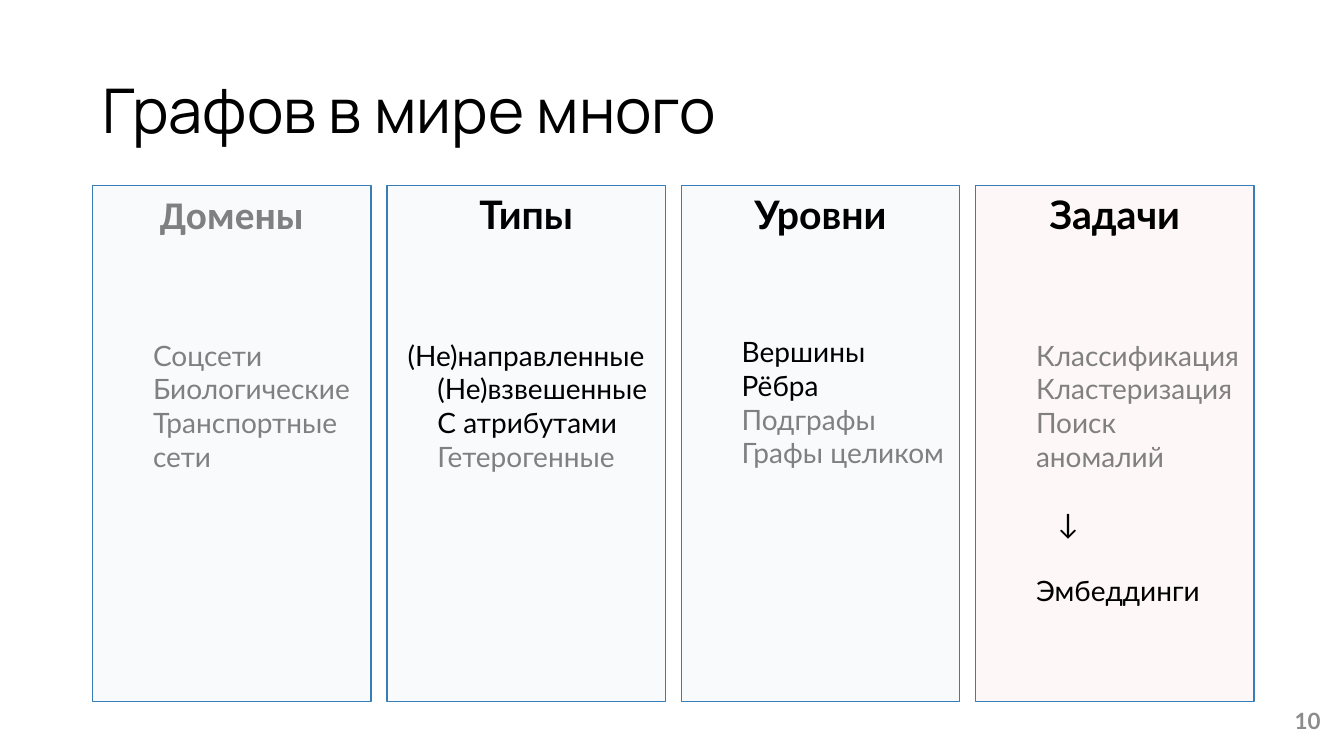
import dataclasses
import typing

import pptx
import pptx.dml.color
import pptx.enum.shapes
import pptx.enum.text
import pptx.oxml
import pptx.oxml.ns
import pptx.util

Pt = pptx.util.Pt
Align = pptx.enum.text.PP_ALIGN
Anchor = pptx.enum.text.MSO_ANCHOR

COLORS = {
    "black": "000000",
    "gray": "808080",
    "number": "8C8C8C",
    "blue": "377EB8",
    "red": "E41A1C",
}
LEFT, TOP, WIDTH, HEIGHT = 66.24, 132.48, 198.72, 368.64
PITCH = 210.24
INDENT = 36
LINE = 24


@dataclasses.dataclass(frozen=True)
class Item:
    text: str
    color: str = "black"
    indent: float = INDENT
    before: float = 0
    align: typing.Any = Align.LEFT


@dataclasses.dataclass(frozen=True)
class Column:
    heading: str
    items: tuple[Item, ...]
    color: str = "black"
    font: str = "Lato"
    tint: str = "blue"
    inset: float = 7.2
    gap: float = 3 * LINE


COLUMNS = (
    Column(
        "Домены",
        (Item("Соцсети Биологические Транспортные сети", "gray"),),
        color="gray",
        font="Calibri",
    ),
    Column(
        "Типы",
        (
            Item("(Не)направленные", indent=0, align=Align.CENTER),
            Item("(Не)взвешенные"),
            Item("С атрибутами"),
            Item("Гетерогенные", "gray"),
        ),
        inset=0,
    ),
    Column(
        "Уровни",
        (
            Item("Вершины"),
            Item("Рёбра"),
            Item("Подграфы", "gray"),
            Item("Графы целиком", "gray"),
        ),
        gap=69.6,
    ),
    Column(
        "Задачи",
        (
            Item("Классификация", "gray"),
            Item("Кластеризация", "gray"),
            Item("Поиск аномалий", "gray"),
            Item("↓", indent=INDENT + 15.4, before=LINE),
            Item("Эмбеддинги", before=LINE),
        ),
        tint="red",
    ),
)


def rgb(name: str) -> pptx.dml.color.RGBColor:
    return pptx.dml.color.RGBColor.from_string(COLORS[name])


def add_run(p, text: str, size: float, font: str, color: str, bold: bool = False) -> None:
    r = p.add_run()
    r.text = text
    r.font.size = Pt(size)
    r.font.name = font
    r.font.bold = bold
    r.font.color.rgb = rgb(color)


def add_label(s, left: float, top: float, width: float, height: float):
    tf = s.shapes.add_textbox(Pt(left), Pt(top), Pt(width), Pt(height)).text_frame
    tf.word_wrap = True
    tf.vertical_anchor = Anchor.MIDDLE
    return tf.paragraphs[0]


def set_opacity(fill, percent: int) -> None:
    clr = fill._xPr.find(".//" + pptx.oxml.ns.qn("a:srgbClr"))
    alpha = pptx.oxml.parse_xml(
        f'<a:alpha {pptx.oxml.ns.nsdecls("a")} val="{percent * 1000}"/>'
    )
    clr.append(alpha)


def add_column(s, column: Column, left: float) -> None:
    sp = s.shapes.add_shape(
        pptx.enum.shapes.MSO_SHAPE.ROUNDED_RECTANGLE,
        Pt(left), Pt(TOP), Pt(WIDTH), Pt(HEIGHT),
    )
    sp.adjustments[0] = 0
    sp.shadow.inherit = False
    sp.fill.solid()
    sp.fill.fore_color.rgb = rgb(column.tint)
    set_opacity(sp.fill, 3)
    sp.line.color.rgb = rgb("blue")
    sp.line.width = Pt(1)

    tf = sp.text_frame
    tf.word_wrap = True
    tf.vertical_anchor = Anchor.TOP
    tf.margin_left = tf.margin_right = Pt(column.inset)
    p = tf.paragraphs[0]
    p.alignment = Align.CENTER
    add_run(p, column.heading, 28, column.font, column.color, bold=True)
    for i, item in enumerate(column.items):
        p = tf.add_paragraph()
        p.alignment = item.align
        p.space_before = Pt(item.before if i else column.gap)
        p._p.get_or_add_pPr().set("marL", str(Pt(item.indent)))
        add_run(p, item.text, 20, "Lato", item.color)


def main() -> None:
    prs = pptx.Presentation()
    prs.slide_width, prs.slide_height = Pt(960), Pt(540)
    s = prs.slides.add_slide(prs.slide_layouts[6])

    p = add_label(s, LEFT, 28.8, 828, 104.4)
    p.line_spacing = 0.9
    add_run(p, "Графов в мире много", 44, "Manrope", "black")

    p = add_label(s, 734.4, 500.4, 216, 28.8)
    p.alignment = Align.RIGHT
    add_run(p, "10", 16, "Lato", "number", bold=True)

    for i, column in enumerate(COLUMNS):
        add_column(s, column, LEFT + i * PITCH)

    prs.save("out.pptx")


if __name__ == "__main__":
    main()
